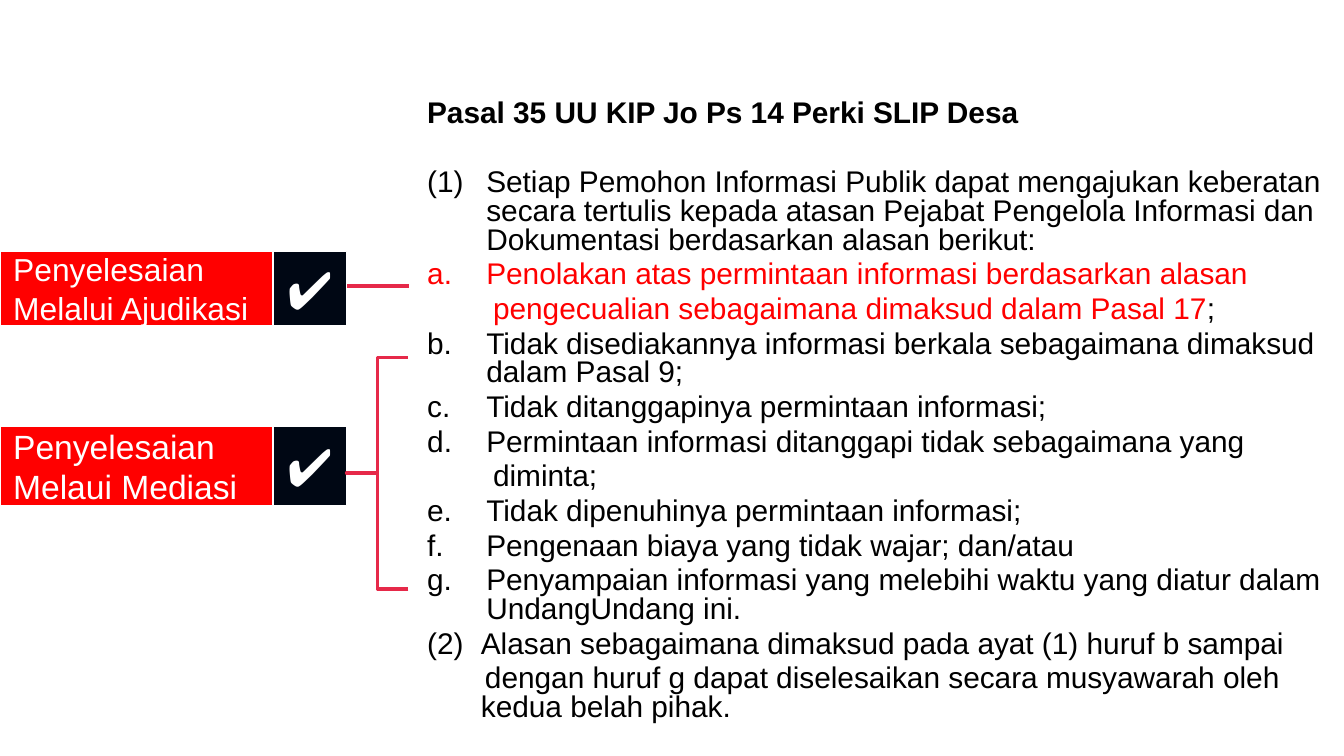
from lxml.etree import SubElement
from pptx import Presentation
from pptx.dml.color import RGBColor
from pptx.enum.shapes import MSO_CONNECTOR, MSO_SHAPE
from pptx.enum.text import MSO_ANCHOR, PP_ALIGN
from pptx.oxml.ns import qn
from pptx.util import Inches, Pt

# Content: heading, then (level, marker, runs)
# A marker is a typed label, an automatic number, or None for a continuation
HEADING = "Pasal 35 UU KIP Jo Ps 14 Perki SLIP Desa"
CLAUSES = [
    ("letter", "(1)", [("Setiap Pemohon Informasi Publik dapat mengajukan keberatan secara tertulis kepada "
                        "atasan Pejabat Pengelola Informasi dan Dokumentasi berdasarkan alasan berikut:", "ink")]),
    ("letter", 1, [("Penolakan atas permintaan informasi berdasarkan alasan", "red")]),
    ("letter", None, [("pengecualian sebagaimana dimaksud dalam Pasal 17", "red"), (";", "ink")]),
    ("letter", "b.", [("Tidak disediakannya informasi berkala sebagaimana dimaksud dalam Pasal 9;", "ink")]),
    ("letter", "c.", [("Tidak ditanggapinya permintaan informasi;", "ink")]),
    ("letter", 4, [("Permintaan informasi ditanggapi tidak sebagaimana yang", "ink")]),
    ("letter", None, [("diminta;", "ink")]),
    ("letter", "e.", [("Tidak dipenuhinya permintaan informasi;", "ink")]),
    ("letter", "f.", [("Pengenaan biaya yang tidak wajar; dan/atau", "ink")]),
    ("letter", "g.", [("Penyampaian informasi yang melebihi waktu yang diatur dalam UndangUndang ini.", "ink")]),
    ("verse", 2, [("Alasan sebagaimana dimaksud pada ayat (1) huruf b sampai", "ink")]),
    ("verse", None, [("dengan huruf g dapat diselesaikan secara musyawarah oleh kedua belah pihak.", "ink")]),
]
# Label lines, top, height, type size
ROUTES = [
    (["Penyelesaian", "Melalui Ajudikasi"], 1.87, 0.55, 17),
    (["Penyelesaian", "Melaui Mediasi"], 3.17, 0.59, 18),
]

THEME = {
    "font": "Arial", "body": 16, "tick": 28,
    "ink": RGBColor(0, 0, 0), "red": RGBColor(255, 0, 0), "white": RGBColor(255, 255, 255),
    "navy": RGBColor(0x00, 0x07, 0x14), "link": RGBColor(0xE6, 0x29, 0x49),
}
# Numbering scheme, hanging margin, first-line shift of a continuation
LEVELS = {
    "letter": ("alphaLcPeriod", 0.44, 0.05),
    "verse": ("arabicParenBoth", 0.40, 0.03),
}
LABEL_W, TICK_W, LINK_END = 2.03, 0.55, 3.04
BOXES_END = LABEL_W + TICK_W
GAP = 0.2 * THEME["body"]       # space before each paragraph
BLANK_LINE = 18.5               # extra space below the heading

# Slide of 16 to 9
prs = Presentation()
prs.slide_width, prs.slide_height = Inches(10), Inches(10 * 9 / 16)
s = prs.slides.add_slide(prs.slide_layouts[6])


def add_run(p, text, size, color, bold=False):
    r = p.add_run()
    r.text = text
    r.font.name, r.font.size, r.font.bold = THEME["font"], Pt(size), bold
    r.font.color.rgb = THEME[color]


def add_box(left, top, width, height, fill, lines, size, align):
    sp = s.shapes.add_shape(MSO_SHAPE.PENTAGON, *map(Inches, (left, top, width, height)))
    sp.adjustments[0] = 0
    sp.shadow.inherit = False
    sp.fill.solid()
    sp.fill.fore_color.rgb = THEME[fill]
    sp.line.color.rgb, sp.line.width = THEME["white"], Pt(0.75)
    tf = sp.text_frame
    tf.vertical_anchor = MSO_ANCHOR.MIDDLE
    if align == PP_ALIGN.CENTER:
        tf.margin_left = tf.margin_right = 0
    for i, line in enumerate(lines):
        p = tf.add_paragraph() if i else tf.paragraphs[0]
        p.alignment = align
        add_run(p, line, size, "white")


def style_link(sp):
    sp.line.color.rgb, sp.line.width = THEME["link"], Pt(2)


# Article text
tb = s.shapes.add_textbox(Inches(3.08), Inches(0.7), Inches(6.92), Inches(4.02))
tf = tb.text_frame
tf.word_wrap = True
p = tf.paragraphs[0]
p.line_spacing, p.space_before, p.space_after = 0.8, Pt(GAP), Pt(BLANK_LINE)
add_run(p, HEADING, THEME["body"], "ink", bold=True)
for level, marker, runs in CLAUSES:
    scheme, margin, shift = LEVELS[level]
    p = tf.add_paragraph()
    p.line_spacing, p.space_before = 0.8, Pt(GAP)
    pPr = p._p.get_or_add_pPr()
    pPr.set("marL", str(Inches(margin)))
    pPr.set("indent", str(Inches(-margin if marker else shift)))
    if isinstance(marker, int):
        SubElement(pPr, qn("a:buAutoNum"), type=scheme, startAt=str(marker))
    label = f"{marker}\t" if isinstance(marker, str) else ""
    for i, (text, color) in enumerate(runs):
        add_run(p, text if i else label + text, THEME["body"], color)

# Line from adjudication to reason a
cn = s.shapes.add_connector(MSO_CONNECTOR.STRAIGHT, Inches(2.52), Inches(2.13), Inches(LINK_END), Inches(2.13))
style_link(cn)
SubElement(cn._element.spPr, qn("a:effectLst"))

# Route labels with ticks
for lines, top, height, size in ROUTES:
    add_box(0, top, LABEL_W, height, "red", lines, size, PP_ALIGN.LEFT)
    add_box(LABEL_W, top, TICK_W, height, "navy", ["✔"], THEME["tick"], PP_ALIGN.CENTER)

# Square brace from mediation to reasons b to g
brace = s.shapes.add_shape(MSO_SHAPE.LEFT_BRACE, Inches(BOXES_END), Inches(2.66),
                           Inches(LINK_END - BOXES_END), Inches(1.72))
brace.adjustments[0], brace.adjustments[1] = 0, 0.5
brace.shadow.inherit = False
brace.fill.background()
style_link(brace)

prs.save("out.pptx")
